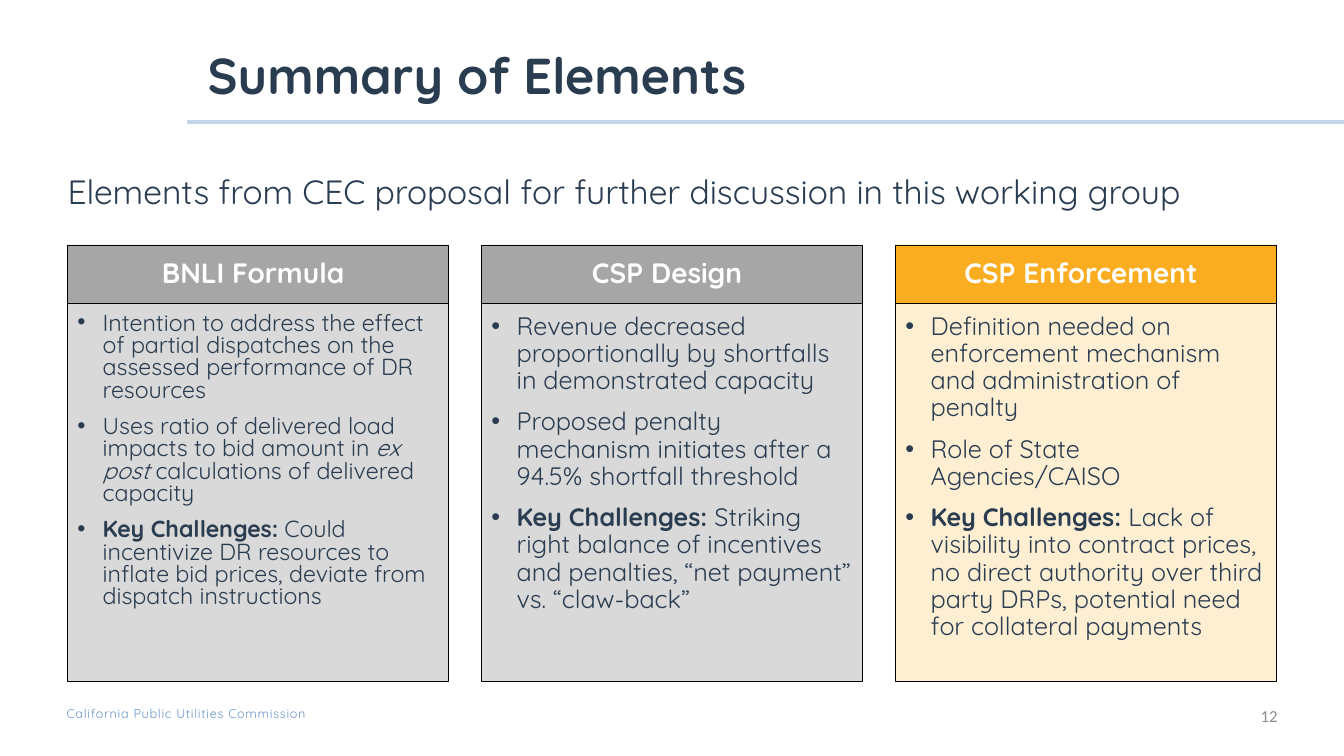
import pptx
import pptx.util
import pptx.dml.color
import pptx.enum.shapes
import pptx.enum.text
import pptx.oxml
import pptx.oxml.ns

ALIGN = pptx.enum.text.PP_ALIGN
ANCHOR = pptx.enum.text.MSO_ANCHOR
INK = "2A3C50"
BOLD = {"bold": True}
ITALIC = {"italic": True}


def color(value):
    return pptx.dml.color.RGBColor.from_string(value)


def apply(target, values):
    for name, value in values.items():
        setattr(target, name, value)


class Page:
    font = {"name": "Quicksand", "bold": False, "italic": False}
    insets = (0, 0.05, 0.1, 0.05)

    def __init__(self, deck):
        self.width, self.height = deck.slide_width, deck.slide_height
        self.slide = deck.slides.add_slide(deck.slide_layouts[6])

    def across(self, share):
        return round(self.width * share / 100)

    def down(self, share):
        return round(self.height * share / 100)

    def place(self, box):
        left, top, width, height = box
        return self.across(left), self.down(top), self.across(width), self.down(height)

    def fill_text(self, frame, paragraphs, size, ink=INK, insets=insets,
                  anchor=ANCHOR.TOP, font=None, layout=None, bullet=False, tracking=None):
        sides = ("margin_left", "margin_top", "margin_right", "margin_bottom")
        margins = {side: pptx.util.Inches(inset) for side, inset in zip(sides, insets)}
        apply(frame, {"word_wrap": True, "vertical_anchor": anchor, **margins})
        for index, runs in enumerate(paragraphs):
            paragraph = frame.add_paragraph() if index else frame.paragraphs[0]
            apply(paragraph, {"alignment": ALIGN.LEFT, **(layout or {})})
            if bullet:
                self.add_bullet(paragraph)
            for words, emphasis in runs:
                run = paragraph.add_run()
                run.text = words
                values = {**self.font, "size": pptx.util.Pt(size), **(font or {}), **emphasis}
                apply(run.font, values)
                run.font.color.rgb = color(ink)
                if tracking:
                    run._r.get_or_add_rPr().set("spc", str(tracking))

    def add_bullet(self, paragraph):
        properties = paragraph._p.get_or_add_pPr()
        indent = pptx.util.Inches(0.25)
        properties.set("marL", str(indent))
        properties.set("indent", str(-indent))
        typeface = pptx.oxml.parse_xml(
            f'<a:buFont {pptx.oxml.ns.nsdecls("a")} typeface="Arial"/>')
        mark = pptx.oxml.parse_xml(f'<a:buChar {pptx.oxml.ns.nsdecls("a")} char="•"/>')
        properties.extend([typeface, mark])

    def text(self, box, words, size, **style):
        label = self.slide.shapes.add_textbox(*self.place(box))
        self.fill_text(label.text_frame, [[(words, {})]], size, **style)

    def panel(self, box, fill, paragraphs, size, **style):
        panel = self.slide.shapes.add_shape(
            pptx.enum.shapes.MSO_SHAPE.RECTANGLE, *self.place(box))
        panel.shadow.inherit = False
        panel.fill.solid()
        panel.fill.fore_color.rgb = color(fill)
        panel.line.color.rgb = color("000000")
        panel.line.width = pptx.util.Pt(0.25)
        self.fill_text(panel.text_frame, paragraphs, size, **style)

    def rule(self, left, right, top, ink, weight):
        rule = self.slide.shapes.add_connector(
            pptx.enum.shapes.MSO_CONNECTOR.STRAIGHT,
            self.across(left), self.down(top), self.across(right), self.down(top))
        rule.line.color.rgb = color(ink)
        rule.line.width = pptx.util.Pt(weight)
        rule._element.spPr.append(
            pptx.oxml.parse_xml(f'<a:effectLst {pptx.oxml.ns.nsdecls("a")}/>'))


ELEMENTS = [
    ("BNLI Formula", "A6A6A6", "D9D9D9", 16.6, 0.8, 0.05, [
        [("Intention to address the effect of partial dispatches on the assessed "
          "performance of DR resources", {})],
        [("Uses ratio of delivered load impacts to bid amount in ", {}),
         ("ex post", ITALIC), (" calculations of delivered capacity", {})],
        [("Key Challenges:", BOLD),
         (" Could incentivize DR resources to inflate bid prices, deviate from "
          "dispatch instructions", {})],
    ]),
    ("CSP Design", "A6A6A6", "D9D9D9", 18, 0.9, 0.1, [
        [("Revenue decreased proportionally by shortfalls in demonstrated capacity", {})],
        [("Proposed penalty mechanism initiates after a 94.5% shortfall threshold", {})],
        [("Key Challenges: ", BOLD),
         ("Striking right balance of incentives and penalties, “net payment” vs. "
          "“claw-back”", {})],
    ]),
    ("CSP Enforcement", "FBAD22", "FEEFD3", 18, 0.9, 0.1, [
        [("Definition needed on enforcement mechanism and administration of penalty", {})],
        [("Role of State Agencies/CAISO", {})],
        [("Key Challenges: ", BOLD),
         ("Lack of visibility into contract prices, no direct authority over third "
          "party DRPs, potential need for collateral payments", {})],
    ]),
]


def main():
    deck = pptx.Presentation()
    apply(deck, {"slide_width": pptx.util.Inches(13.33),
                 "slide_height": pptx.util.Inches(7.5)})
    page = Page(deck)
    margin, pitch, column = 5.03, 30.8, 28.36
    header_top, header_height, body_height = 32.4, 7.73, 50
    gap = pptx.util.Pt(10)

    page.rule(13.95, 100, 16.13, "C3D5E9", 3)
    page.text((15.45, 2.53, 80.57, 12.13), "Summary of Elements", 36,
              anchor=ANCHOR.BOTTOM, font=BOLD, layout={"line_spacing": 0.9})
    page.text((margin, 22.53, 90.1, 7.2),
              "Elements from CEC proposal for further discussion in this working group",
              24, layout={"line_spacing": 0.9, "space_before": gap})

    for index, (heading, accent, tint, size, spacing, bottom, points) in enumerate(ELEMENTS):
        left = margin + index * pitch
        page.panel((left, header_top, column, header_height), accent,
                   [[(heading, BOLD)]], 20, ink="FFFFFF", anchor=ANCHOR.MIDDLE,
                   layout={"alignment": ALIGN.CENTER, "line_spacing": 0.9,
                           "space_before": gap})
        page.panel((left, header_top + header_height, column, body_height), tint,
                   points, size, insets=(0.1, 0.1, 0.1, bottom), bullet=True,
                   layout={"line_spacing": spacing, "space_before": gap})

    flush = (0, 0, 0, 0)
    page.text((4.95, 93.33, 24.08, 2), "California Public Utilities Commission", 9,
              ink="6996C9", insets=flush, tracking=50)
    page.text((91.9, 93.33, 3.15, 2.67), "12", 12, ink="8C8C8C", insets=flush,
              font={"name": "Calibri"}, layout={"alignment": ALIGN.RIGHT})
    deck.save("out.pptx")


if __name__ == "__main__":
    main()
